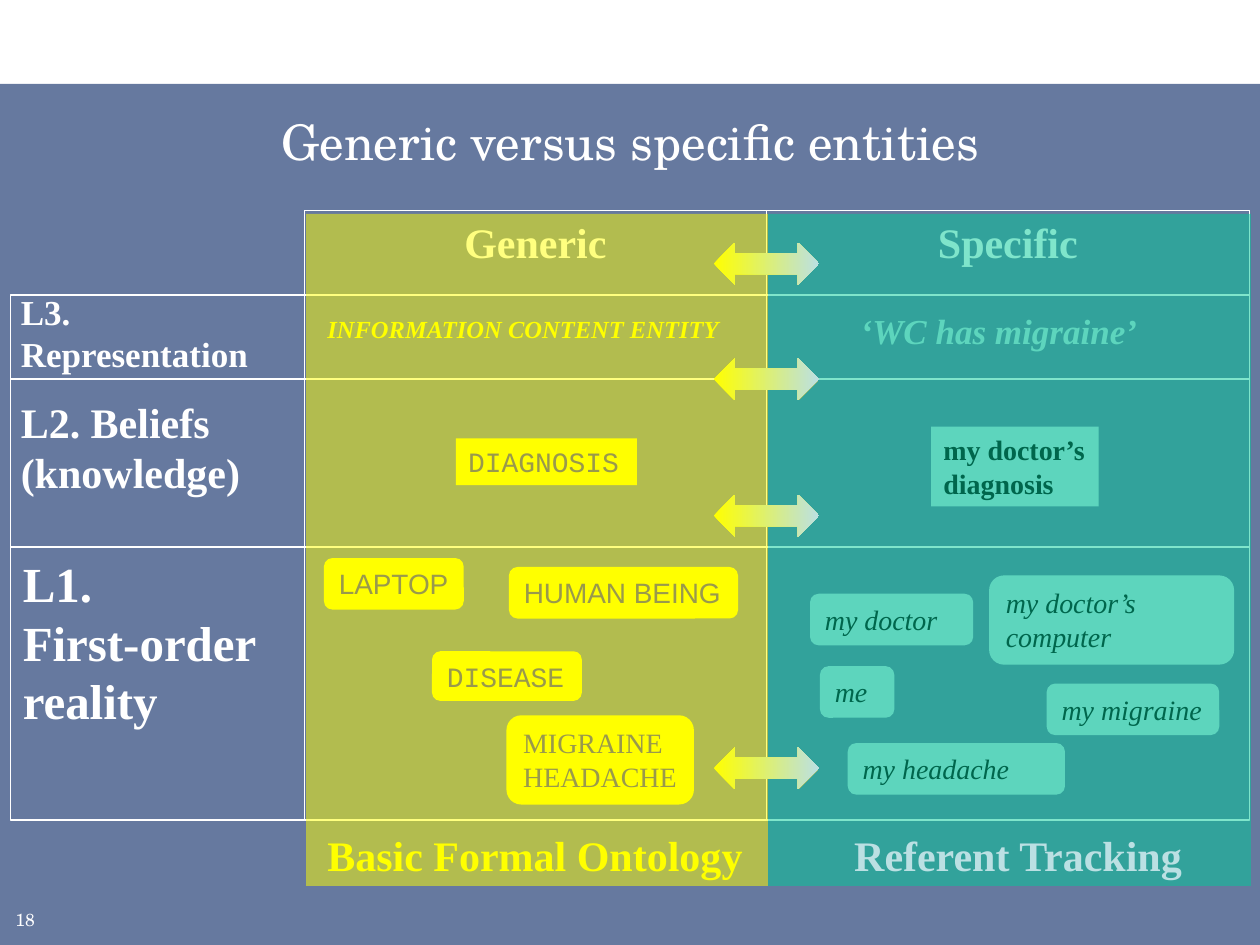
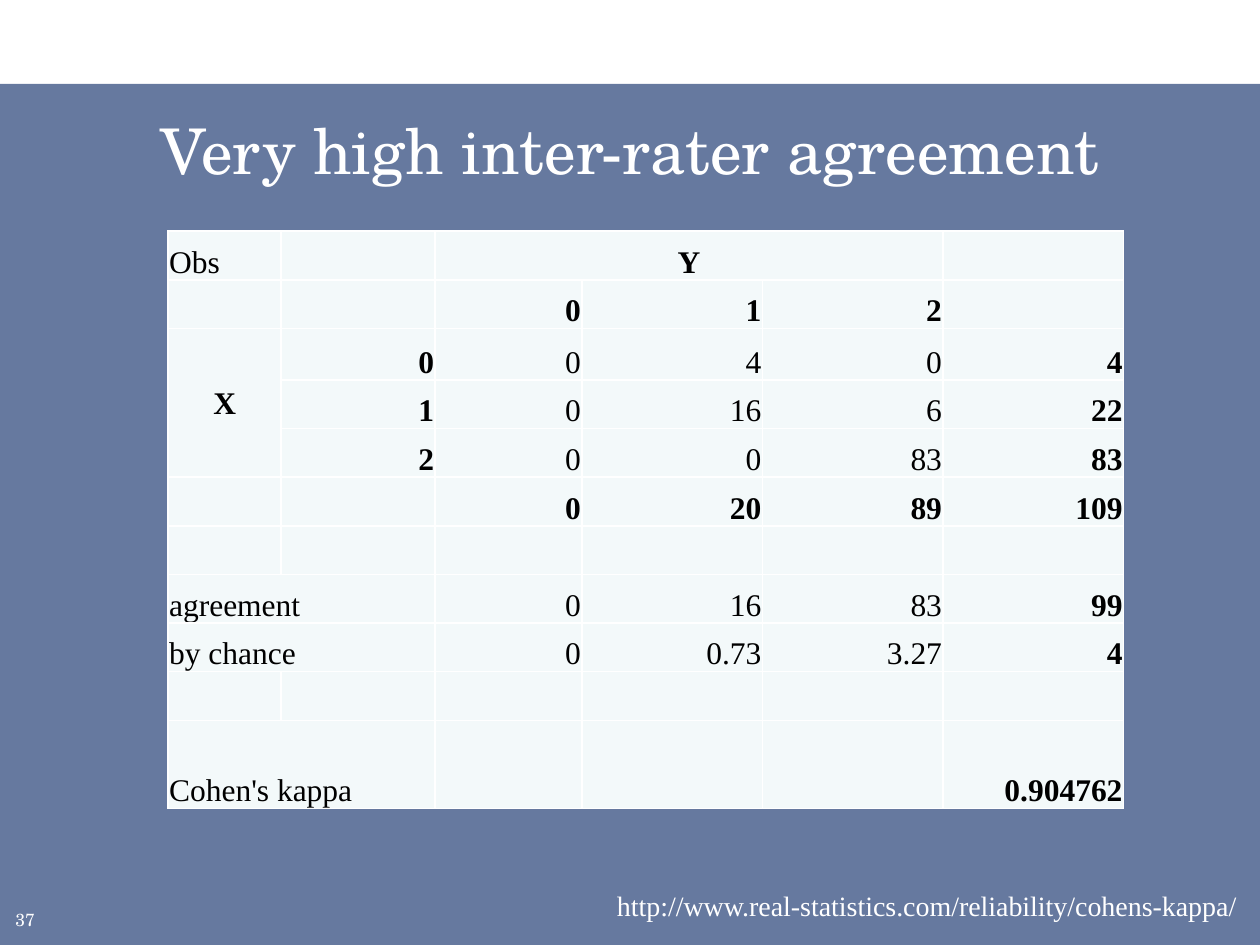
from lxml import etree
from pptx import Presentation
from pptx.dml.color import RGBColor
from pptx.enum.shapes import MSO_SHAPE
from pptx.enum.text import MSO_ANCHOR, MSO_AUTO_SIZE, PP_ALIGN
from pptx.oxml.ns import qn
from pptx.util import Cm, Pt

RECT = MSO_SHAPE.RECTANGLE
ROUNDED = MSO_SHAPE.ROUNDED_RECTANGLE
ARROW = MSO_SHAPE.LEFT_RIGHT_ARROW
TOP, MIDDLE, BOTTOM = MSO_ANCHOR.TOP, MSO_ANCHOR.MIDDLE, MSO_ANCHOR.BOTTOM
LEFT, CENTER, RIGHT = PP_ALIGN.LEFT, PP_ALIGN.CENTER, PP_ALIGN.RIGHT
NO_AUTOFIT = MSO_AUTO_SIZE.NONE

SERIF = "Times New Roman"
SCHOLA = "TeX Gyre Schola"
WHITE, BLACK, NAVY, INDIGO = "FFFFFF", "000000", "002060", "333399"
YELLOW, TEAL, PALE, CELL = "FFFF00", "00CC99", "BBE0E3", "F3F9FA"


def paint(fill, color, opacity=100):
    fill.solid()
    fill.fore_color.rgb = RGBColor.from_string(color)
    if opacity < 100:
        rgb = fill._xPr.find(qn("a:solidFill"))[0]
        etree.SubElement(rgb, qn("a:alpha"), val=str(opacity * 1000))


def place(slide, kind, box, text="", size=16, color=WHITE, font=SERIF, bold=False,
          italic=False, align=LEFT, wrap=True, fill=None, opacity=100):
    bounds = [Cm(length) for length in box]
    if kind is None:
        shape = slide.shapes.add_textbox(*bounds)
    else:
        shape = slide.shapes.add_shape(kind, *bounds)
        shape.shadow.inherit = False
        shape.line.fill.background()
        if fill:
            paint(shape.fill, fill, opacity)
        else:
            shape.fill.background()
    frame = shape.text_frame
    frame.word_wrap = wrap
    frame.vertical_anchor = TOP
    for index, line in enumerate(text.split("\n") if text else []):
        paragraph = frame.add_paragraph() if index else frame.paragraphs[0]
        paragraph.alignment = align
        run = paragraph.add_run()
        run.text = line
        run.font.size, run.font.name = Pt(size), font
        run.font.bold, run.font.italic = bold, italic
        paint(run.font.fill, color)
    return shape


prs = Presentation()
prs.slide_width, prs.slide_height = Cm(25.4), Cm(19.05)

slides = []
for heading, size, number in [("Generic versus specific entities", 28, "18"),
                              ("Very high inter-rater agreement", 36, "37")]:
    slide = prs.slides.add_slide(prs.slide_layouts[5])
    band = place(slide, RECT, (0, 1.69, 25.4, 17.36), fill=NAVY, opacity=60)
    slide.shapes._spTree.insert(2, band._element)
    title = slide.shapes.title
    title.left, title.top, title.width, title.height = Cm(0.64), Cm(2.12), Cm(24.13), Cm(2.12)
    title.text_frame.vertical_anchor = TOP
    title.text_frame.auto_size = NO_AUTOFIT
    title.text_frame.paragraphs[0].alignment = CENTER
    run = title.text_frame.paragraphs[0].add_run()
    run.text = heading
    run.font.size, run.font.name = Pt(size), SCHOLA
    paint(run.font.fill, WHITE)
    place(slide, None, (0.06, 18.2, 1, 0.64), number, 10, font=SCHOLA)
    slides.append(slide)
entities, agreement = slides

column_edges = [0.21, 6.14, 15.45, 25.19]
row_edges = [4.25, 5.95, 7.64, 11.03, 16.53]
cell_texts = {(0, 1): "Generic", (0, 2): "Specific", (3, 0): "L1.\nFirst-order reality"}
for row, (top, bottom) in enumerate(zip(row_edges, row_edges[1:])):
    for column, (left, right) in enumerate(zip(column_edges, column_edges[1:])):
        if (row, column) in [(0, 0), (1, 1)]:
            continue
        cell = place(entities, RECT, (left, top, right - left, bottom - top),
                     cell_texts.get((row, column), ""), 24 if row == 0 else 28,
                     bold=True, align=CENTER if row == 0 else LEFT)
        paint(cell.line.fill, WHITE)
        cell.line.width = Pt(0.75)

place(entities, None, (0.17, 5.74, 6.02, 1.96), "L3. Representation", 20, bold=True)
place(entities, None, (0.17, 7.86, 6.02, 2.29), "L2. Beliefs (knowledge)", 24, bold=True)
place(entities, None, (6.35, 6.21, 8.48, 0.86), "INFORMATION CONTENT ENTITY", 14, YELLOW,
      bold=True, italic=True, wrap=False)
place(entities, None, (17.1, 6.12, 6.1, 1.12), "‘WC has migraine’", 20, PALE,
      bold=True, italic=True, wrap=False)
place(entities, RECT, (9.19, 8.84, 3.65, 0.94), "DIAGNOSIS", color=INDIGO,
      font="Courier New", wrap=False, fill=YELLOW)
place(entities, RECT, (18.77, 8.6, 3.38, 1.61), "my doctor’s\ndiagnosis", color=BLACK,
      bold=True, wrap=False, fill=PALE)

for box, universal, font in [
    ((10.26, 11.43, 4.62, 1.04), "HUMAN BEING", "Arial"),
    ((8.71, 13.13, 3.02, 1.0), "DISEASE", "Courier New"),
    ((6.53, 11.25, 2.82, 1.04), "LAPTOP", "Arial"),
    ((10.21, 14.42, 3.78, 1.8), "MIGRAINE\nHEADACHE", SERIF),
]:
    place(entities, ROUNDED, box, universal, color=INDIGO, font=font, wrap=False, fill=YELLOW)

for box, particular, wrap in [
    ((16.53, 13.43, 1.5, 1.04), "me", True),
    ((17.09, 14.98, 4.38, 1.04), "my headache", True),
    ((21.1, 13.78, 3.48, 1.04), "my migraine", False),
    ((16.33, 11.97, 3.29, 1.04), "my doctor", True),
    ((19.94, 11.6, 4.94, 1.8), "my doctor’s computer", True),
]:
    place(entities, ROUNDED, box, particular, color=BLACK, italic=True, wrap=wrap, fill=PALE)

for panel_left, panel_width, tint, name_box, name, name_color in [
    (15.48, 9.74, TEAL, (16.97, 16.59, 7.21, 1.27), "Referent Tracking", PALE),
    (6.17, 9.31, YELLOW, (6.35, 16.59, 9.1, 1.27), "Basic Formal Ontology", YELLOW),
]:
    place(entities, RECT, (panel_left, 4.31, panel_width, 13.55), fill=tint, opacity=50)
    place(entities, None, name_box, name, 24, name_color, bold=True)

for top in [4.89, 7.22, 9.97, 15.06]:
    arrow = place(entities, ARROW, (14.39, top, 2.12, 0.85))
    arrow.fill.gradient()
    arrow.fill.gradient_angle = 0
    for stop, color in zip(arrow.fill.gradient_stops, [YELLOW, PALE]):
        stop.color.rgb = RGBColor.from_string(color)

ratings = [
    ["Obs", "", "Y", "", "", ""],
    ["", "", "0", "1", "2", ""],
    ["X", "0", "0", "4", "0", "4"],
    ["", "1", "0", "16", "6", "22"],
    ["", "2", "0", "0", "83", "83"],
    ["", "", "0", "20", "89", "109"],
    ["", "", "", "", "", ""],
    ["agreement", "", "0", "16", "83", "99"],
    ["by chance", "", "0", "0.73", "3.27", "4"],
    ["", "", "", "", "", ""],
    ["Cohen's kappa", "", "", "", "", "0.904762"],
]
column_widths = [2.28, 3.1, 2.96, 3.64, 3.64, 3.64]
row_heights = [0.98, 0.98, 1.04] + [0.98] * 7 + [1.78]
kappa_table = agreement.shapes.add_table(
    len(ratings), len(column_widths), Cm(3.39), Cm(4.66),
    Cm(sum(column_widths)), Cm(sum(row_heights))).table
kappa_table.first_row = kappa_table.horz_banding = False
for column, width in zip(kappa_table.columns, column_widths):
    column.width = Cm(width)
for row, height in zip(kappa_table.rows, row_heights):
    row.height = Cm(height)

for r, values in enumerate(ratings):
    for c, value in enumerate(values):
        cell = kappa_table.cell(r, c)
        cell.margin_left = cell.margin_right = cell.margin_top = Cm(0.02)
        cell.margin_bottom = 0
        cell.vertical_anchor = MIDDLE if value == "X" else BOTTOM
        paint(cell.fill, CELL)
        for index, side in enumerate(["a:lnL", "a:lnR", "a:lnT", "a:lnB"]):
            border = etree.Element(qn(side), w=str(Pt(1)))
            border_fill = etree.SubElement(border, qn("a:solidFill"))
            etree.SubElement(border_fill, qn("a:srgbClr"), val=WHITE)
            cell._tc.tcPr.insert(index, border)
        if value:
            axis_name = value in ("X", "Y")
            paragraph = cell.text_frame.paragraphs[0]
            paragraph.alignment = CENTER if axis_name else LEFT if c == 0 else RIGHT
            run = paragraph.add_run()
            run.text = value
            run.font.size, run.font.name = Pt(18), SERIF
            run.font.bold = axis_name or c in (1, 5) or r in (1, 5)
            paint(run.font.fill, BLACK)

for first, last in [((0, 2), (0, 4)), ((2, 0), (4, 0)), ((7, 0), (7, 1)),
                    ((8, 0), (8, 1)), ((10, 0), (10, 1))]:
    kappa_table.cell(*first).merge(kappa_table.cell(*last))

place(agreement, None, (9.74, 17.78, 15.45, 0.94),
      "http://www.real-statistics.com/reliability/cohens-kappa/", align=RIGHT)

prs.save("out.pptx")
